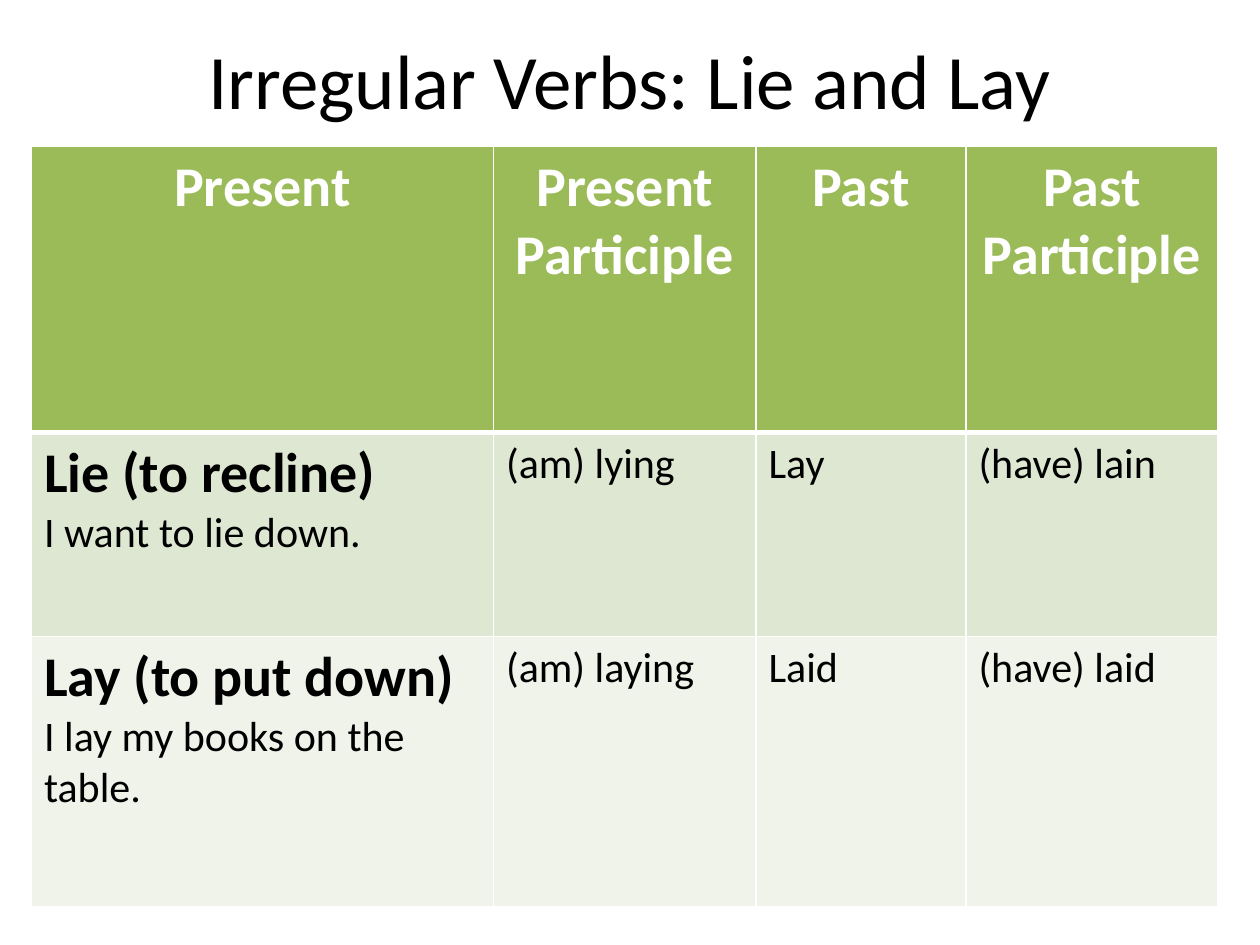
import pptx
import pptx.util
import pptx.dml.color
import pptx.enum.text
import pptx.oxml
import pptx.oxml.ns

Pt = pptx.util.Pt
Align = pptx.enum.text.PP_ALIGN
Anchor = pptx.enum.text.MSO_ANCHOR


def color(code):
    return pptx.dml.color.RGBColor.from_string(code)


class Deck:
    font = "Calibri"
    dark = "000000"
    light = "FFFFFF"
    fills = ["9BBB59", "DEE7D1", "EFF3EA"]
    big = 32
    small = 24

    def __init__(self, wide, high):
        self.show = pptx.Presentation()
        self.show.slide_width = Pt(wide)
        self.show.slide_height = Pt(high)
        self.slide = self.show.slides.add_slide(self.show.slide_layouts[5])

    def words(self, para, text, size, ink, bold=False, align=Align.LEFT):
        para.alignment = align
        run = para.add_run()
        run.text = text
        run.font.name = self.font
        run.font.size = Pt(size)
        run.font.bold = bold
        run.font.color.rgb = color(ink)

    def title(self, text, left, top, wide, high):
        shape = self.slide.shapes.title
        shape.left, shape.top = Pt(left), Pt(top)
        shape.width, shape.height = Pt(wide), Pt(high)
        frame = shape.text_frame
        frame.vertical_anchor = Anchor.MIDDLE
        self.words(frame.paragraphs[0], text, 44, self.dark, align=Align.CENTER)

    def border(self, cell, side, width):
        line = pptx.oxml.parse_xml(
            f'<a:{side} {pptx.oxml.ns.nsdecls("a")} w="{Pt(width)}"><a:solidFill>'
            f'<a:srgbClr val="{self.light}"/></a:solidFill></a:{side}>')
        cell._tc.get_or_add_tcPr().append(line)

    def cell(self, cell, lines, row, col):
        head = row == 0
        for side in ("lnL", "lnR", "lnT", "lnB"):
            thick = (row, side) in ((0, "lnB"), (1, "lnT"))
            self.border(cell, side, 3 if thick else 1)
        cell.fill.solid()
        cell.fill.fore_color.rgb = color(self.fills[row])
        frame = cell.text_frame
        for index, text in enumerate(lines):
            para = frame.add_paragraph() if index else frame.paragraphs[0]
            bold = head or (col == 0 and index == 0)
            self.words(para, text, self.big if bold else self.small,
                       self.light if head else self.dark, bold,
                       Align.CENTER if head else Align.LEFT)

    def table(self, data, left, top, cols, rows):
        grid = self.slide.shapes.add_table(
            len(rows), len(cols), Pt(left), Pt(top),
            Pt(sum(cols)), Pt(sum(rows))).table
        for col, wide in zip(grid.columns, cols):
            col.width = Pt(wide)
        for row, high in zip(grid.rows, rows):
            row.height = Pt(high)
        for row, items in enumerate(data):
            for col, lines in enumerate(items):
                self.cell(grid.cell(row, col), lines, row, col)


def main():
    deck = Deck(720, 540)
    deck.title("Irregular Verbs: Lie and Lay", 36, 0, 648, 90)
    verbs = [
        [["Present"], ["Present Participle"], ["Past"], ["Past Participle"]],
        [["Lie (to recline)", "I want to lie down."],
         ["(am) lying"], ["Lay"], ["(have) lain"]],
        [["Lay (to put down)", "I lay my books on the table."],
         ["(am) laying"], ["Laid"], ["(have) laid"]],
    ]
    deck.table(verbs, 18, 83.75, [264, 150, 120, 144], [163.5, 116.5, 154.5])
    deck.show.save("out.pptx")


if __name__ == "__main__":
    main()
